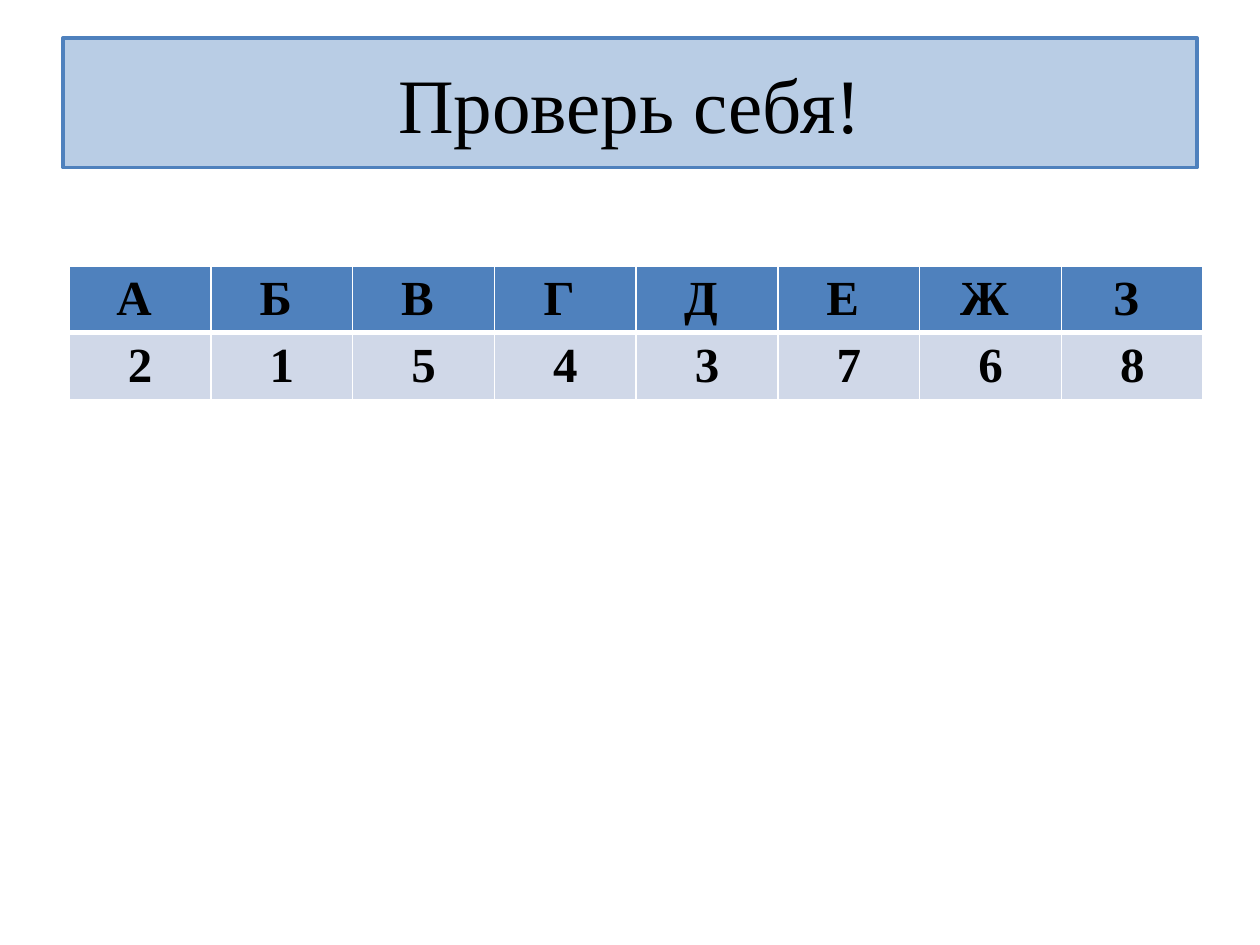
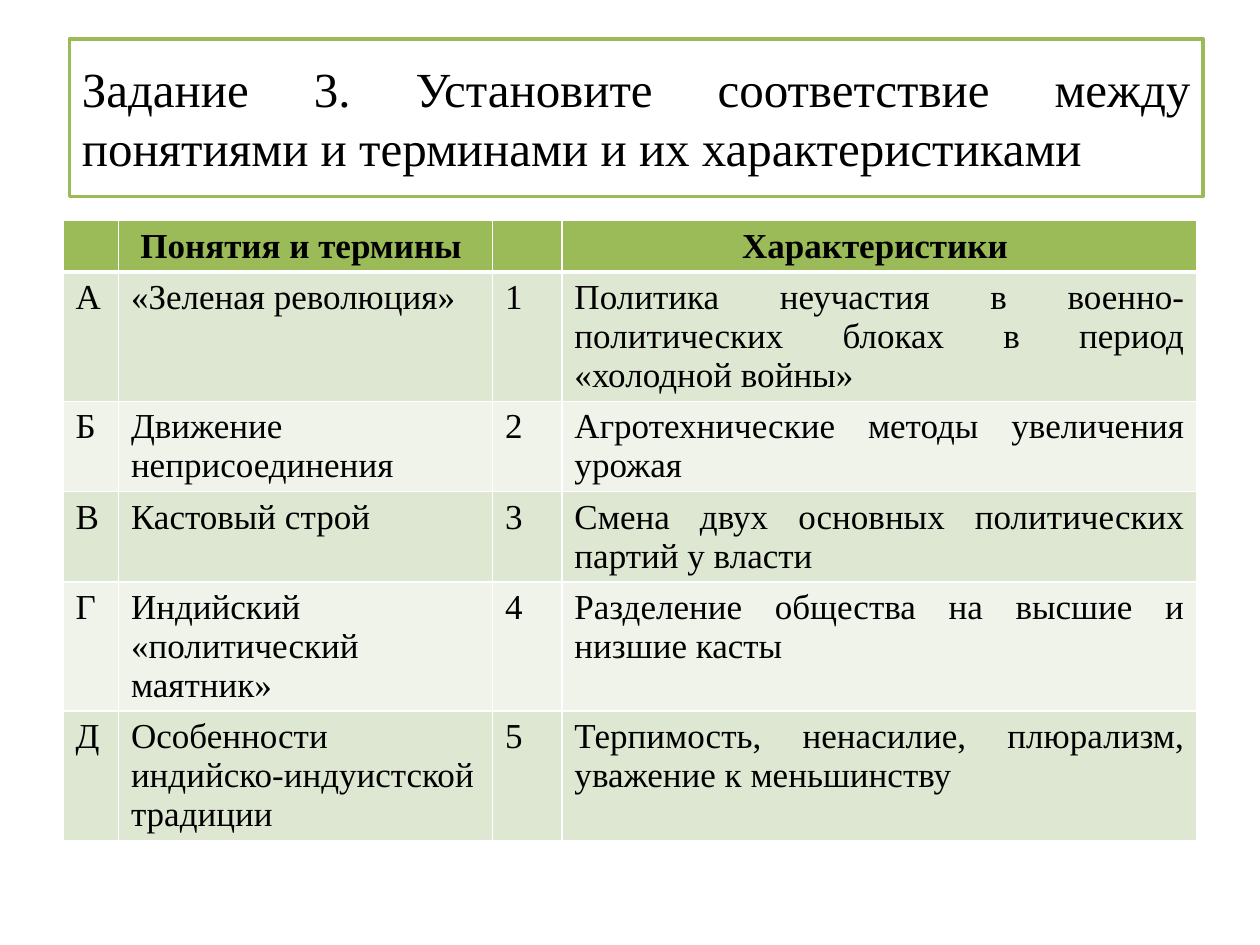
import pptx
import pptx.dml.color
import pptx.enum.text
import pptx.oxml
import pptx.oxml.ns
import pptx.util
from dataclasses import dataclass

ALIGN = pptx.enum.text.PP_ALIGN
ANCHOR = pptx.enum.text.MSO_ANCHOR
COLS, ROWS = 200, 150  # grid of the slide, 0.05 inch a step


@dataclass(frozen=True)
class Palette:
    title_fill: str
    accent: str
    bands: tuple


@dataclass(frozen=True)
class Theme:
    font: str = "Times New Roman"
    text: str = "000000"
    rule: str = "FFFFFF"
    big: int = 44
    medium: int = 28
    small: int = 20
    title_line: float = 2
    thin: float = 1
    thick: float = 3
    blue: Palette = Palette("B9CDE5", "4F81BD", ("D0D8E8",))
    green: Palette = Palette("FFFFFF", "9BBB59", ("DEE7D1", "EFF3EA"))


THEME = Theme()

ANSWERS = [
    ["А ", "Б ", "В ", "Г ", "Д ", "Е ", "Ж ", "З "],
    ["2", "1", "5", "4", "3", "7", "6", "8"],
]
TERMS = [
    ["", "Понятия и термины ", "", "Характеристики "],
    ["А", "«Зеленая революция»", "1",
     "Политика неучастия в военно-политических блоках в период «холодной войны»"],
    ["Б", "Движение неприсоединения", "2",
     "Агротехнические методы увеличения урожая"],
    ["В", "Кастовый строй", "3",
     "Смена двух основных политических партий у власти"],
    ["Г", "Индийский «политический маятник»", "4",
     "Разделение общества на высшие и низшие касты"],
    ["Д", "Особенности индийско-индуистской традиции", "5",
     "Терпимость, ненасилие, плюрализм, уважение к меньшинству"],
]


def rgb(color):
    return pptx.dml.color.RGBColor.from_string(color)


def grid(steps):
    return pptx.util.Inches(steps * 10 / COLS)


def paint(fill, color):
    fill.solid()
    fill.fore_color.rgb = rgb(color)


def write(tf, text, size, align=ALIGN.CENTER, bold=False):
    p = tf.paragraphs[0]
    p.alignment = align
    if not text:
        return
    r = p.add_run()
    r.text = text
    r.font.name = THEME.font
    r.font.size = pptx.util.Pt(size)
    r.font.bold = bold
    r.font.color.rgb = rgb(THEME.text)


def add_titled_slide(prs, text, box, palette, size, align=ALIGN.CENTER):
    slide = prs.slides.add_slide(prs.slide_layouts.get_by_name("Title Only"))
    sp = slide.shapes.title
    sp.left, sp.top, sp.width, sp.height = map(grid, box)
    paint(sp.fill, palette.title_fill)
    sp.line.color.rgb = rgb(palette.accent)
    sp.line.width = pptx.util.Pt(THEME.title_line)
    sp.text_frame.word_wrap = True
    sp.text_frame.vertical_anchor = ANCHOR.MIDDLE
    write(sp.text_frame, text, size, align)
    return slide


def add_borders(cell, top, bottom):
    """Rule all four sides of a cell; top and bottom are widths in points."""
    props = cell._tc.get_or_add_tcPr()
    sides = {"L": THEME.thin, "R": THEME.thin, "T": top, "B": bottom}
    for side, width in sides.items():
        props.append(pptx.oxml.parse_xml(
            f'<a:ln{side} {pptx.oxml.ns.nsdecls("a")} w="{pptx.util.Pt(width)}">'
            f'<a:solidFill><a:srgbClr val="{THEME.rule}"/></a:solidFill></a:ln{side}>'))


def add_grid_table(slide, data, left, top, widths, palette, size,
                   body_align=ALIGN.CENTER, body_bold=False):
    row_height = 8.2
    table = slide.shapes.add_table(
        len(data), len(widths), grid(left), grid(top),
        grid(sum(widths)), grid(row_height * len(data))).table
    for column, width in zip(table.columns, widths):
        column.width = grid(width)
    for i, texts in enumerate(data):
        header = i == 0
        color = palette.accent if header else palette.bands[(i - 1) % len(palette.bands)]
        for cell, text in zip(table.rows[i].cells, texts):
            add_borders(cell, THEME.thick if i == 1 else THEME.thin,
                        THEME.thick if header else THEME.thin)
            paint(cell.fill, color)
            write(cell.text_frame, text, size,
                  ALIGN.CENTER if header else body_align, header or body_bold)


def main():
    prs = pptx.Presentation()
    prs.slide_width, prs.slide_height = grid(COLS), grid(ROWS)

    slide = add_titled_slide(prs, "Проверь себя!", (10, 6, 180, 20.6),
                             THEME.blue, THEME.big)
    add_grid_table(slide, ANSWERS, 11, 42.2, [180 / 8] * 8, THEME.blue,
                   THEME.medium, body_bold=True)

    slide = add_titled_slide(
        prs, "Задание 3. Установите соответствие между понятиями и терминами "
        "и их характеристиками", (11, 6.2, 180, 25), THEME.green,
        THEME.medium, ALIGN.JUSTIFY)
    add_grid_table(slide, TERMS, 10, 35, [8.8, 59.4, 11, 100.8], THEME.green,
                   THEME.small, ALIGN.JUSTIFY)

    prs.save("out.pptx")


if __name__ == "__main__":
    main()
